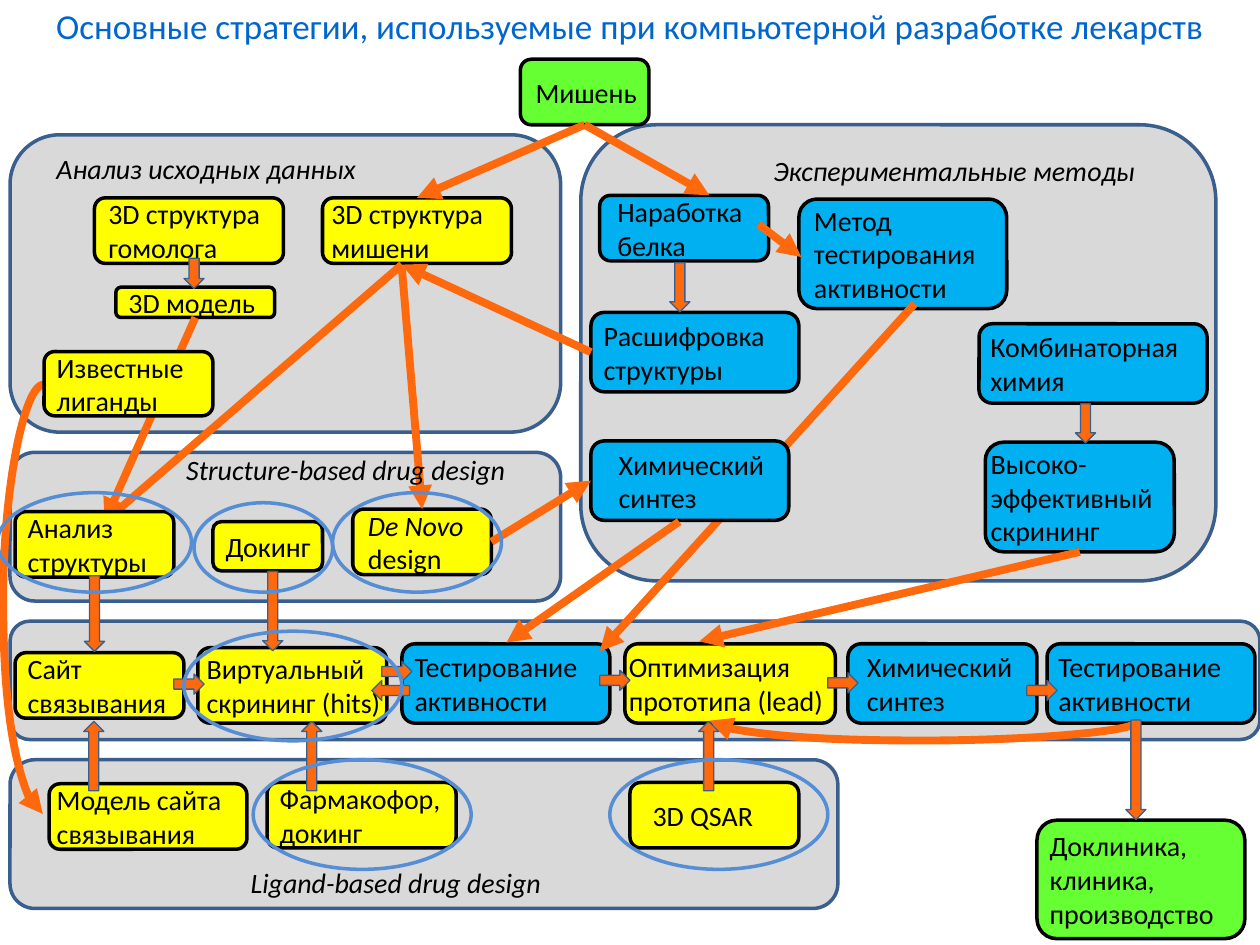
from lxml.etree import SubElement
from pptx import Presentation
from pptx.dml.color import RGBColor
from pptx.enum.shapes import MSO_CONNECTOR, MSO_SHAPE
from pptx.enum.text import MSO_ANCHOR, PP_ALIGN
from pptx.oxml.ns import qn
from pptx.util import Inches, Pt

COLORS = {
    "panel": "D9D9D9", "panel_edge": "3A5F8C", "yellow": "FFFF00",
    "blue": "00B0F0", "green": "66FF33", "black": "000000",
    "arrow": "FF690D", "ring": "558ED5", "title": "0066CC",
}
FONT = "Calibri"
TOP, LEFT, BOTTOM, RIGHT = 0, 1, 2, 3
CORNER_INSET = 0.29 / 6

PANELS = [
    (4.61, 0.99, 5.04, 3.62),
    (0.08, 3.59, 4.37, 1.18),
    (0.08, 1.07, 4.37, 2.36),
    (0.08, 4.93, 9.92, 0.94),
    (0.08, 6.03, 6.57, 1.18),
]

BACK_STEPS = {
    "screening": ("Виртуальный\ncкрининг (hits)", "yellow", (1.57, 5.14, 1.5, 0.6), 0.07),
    "lead": ("Оптимизация\nпрототипа (lead)", "yellow", (4.96, 5.11, 1.67, 0.63), 0.03),
    "homolog": ("3D структура\nгомолога", "yellow", (0.75, 1.57, 1.5, 0.52), 0.11),
    "model": ("3D модель", "yellow", (0.92, 2.28, 1.26, 0.24), 0.1),
    "docking": ("Докинг", "yellow", (1.69, 4.14, 0.87, 0.39), 0.1),
    "de_novo": ("De Novo\ndesign", "yellow", (2.8, 4.04, 1.1, 0.52), 0.12),
    "protein": ("Наработка\nбелка", "blue", (4.76, 1.55, 1.34, 0.52), 0.14),
    "decoding": ("Расшифровка\nструктуры", "blue", (4.69, 2.48, 1.65, 0.63), 0.1),
    "method": ("Метод\nтестирования\nактивности", "blue", (6.34, 1.58, 1.65, 0.87), 0.12),
    "throughput": ("Высоко-\nэффективный\nскрининг", "blue", (7.82, 3.51, 1.5, 0.87), 0.04),
    "combinatorial": ("Комбинаторная\nхимия", "blue", (7.77, 2.57, 1.81, 0.63), 0.09),
    "hit_testing": ("Тестирование\nактивности", "blue", (3.19, 5.11, 1.65, 0.63), 0.1),
    "lead_synthesis": ("Химический\nсинтез", "blue", (6.73, 5.11, 1.5, 0.63), 0.15),
    "lead_testing": ("Тестирование\nактивности", "blue", (8.31, 5.11, 1.65, 0.63), 0.09),
    "clinic": ("Доклиника,\nклиника,\nпроизводство", "green", (8.23, 6.51, 1.65, 0.94), 0.1),
    "pharmacophore": ("Фармакофор,\nдокинг", "yellow", (2.12, 6.21, 1.5, 0.52), 0.1),
    "site_model": ("Модель сайта\nсвязывания", "yellow", (0.39, 6.22, 1.57, 0.52), 0.06),
    "target_3d": ("3D структура\nмишени", "yellow", (2.56, 1.57, 1.5, 0.52), 0.07),
    "qsar": ("3D QSAR", "yellow", (5, 6.21, 1.34, 0.52), 0.18),
}

FRONT_STEPS = {
    "synthesis": ("Химический\nсинтез", "blue", (4.69, 3.5, 1.57, 0.63), 0.22),
    "ligands": ("Известные\nлиганды", "yellow", (0.35, 2.79, 1.34, 0.51), 0.1),
    "site": ("Сайт\nсвязывания", "yellow", (0.12, 5.18, 1.34, 0.52), 0.1),
    "analysis": ("Анализ\nструктуры", "yellow", (0.12, 4.06, 1.26, 0.52), 0.1),
    "target": ("Мишень", "green", (4.13, 0.47, 1.02, 0.52), 0.12),
}

BACK_LINKS = [
    ((7.26, 2.41), (4.76, 5.17)),
    (("model", BOTTOM), (0.83, 4.14)),
    ((3.19, 2.1), (0.83, 4.14)),
]

FRONT_LINKS = [
    (("de_novo", RIGHT), ("synthesis", LEFT)),
    (("decoding", LEFT), (3.19, 2.1)),
    ((5.39, 4.14), (4.02, 5.1)),
    (("target", BOTTOM), ("target_3d", TOP)),
    (("target", BOTTOM), (5.63, 1.55)),
    ((6.02, 1.78), (6.36, 2.04)),
    (("throughput", BOTTOM), (5.55, 5.09)),
    ((3.19, 2.13), ("de_novo", TOP)),
]

BLOCK_ARROWS = [
    (1.42, 2.09, 0.24, 90), (1.85, 4.77, 0.63, 90), (0.45, 4.79, 0.6, 90),
    (5.2, 2.2, 0.39, 90), (8.62, 6.03, 0.79, 90), (8.46, 3.28, 0.31, 90),
    (0.47, 5.92, 0.55, 270), (2.2, 5.92, 0.55, 270), (5.35, 5.92, 0.55, 270),
    (2.95, 5.4, 0.3, 180), (3.03, 5.25, 0.24, 0), (4.76, 5.32, 0.24, 0),
    (6.57, 5.34, 0.24, 0), (8.15, 5.4, 0.24, 0), (1.38, 5.35, 0.24, 0),
]

CAPTIONS = [
    ("Экспериментальные методы", 6.04, 1.17, 3.37),
    ("Анализ исходных данных", 0.35, 1.15, 2.84),
    ("Ligand-based drug design", 1.89, 6.82, 2.79),
    ("Structure-based drug design", 1.38, 3.54, 3.03),
]

RINGS = [
    (1.54, 3.99, 1.1, 0.71), (2.64, 3.91, 1.34, 0.79), (1.46, 5.01, 1.73, 0.87),
    (2.01, 6.03, 1.73, 0.87), (4.84, 6.03, 1.73, 0.87), (-0.02, 3.91, 1.54, 0.79),
]


def rgb(name):
    return RGBColor.from_string(COLORS[name])


def inches(values):
    return [Inches(value) for value in values]


def format_text(frame, size, color, italic=False):
    for paragraph in frame.paragraphs:
        for run in paragraph.runs:
            run.font.name = FONT
            run.font.size = Pt(size)
            run.font.italic = italic
            run.font.color.rgb = rgb(color)


def add_outline(slide, preset, place, fill, edge, weight):
    outline = slide.shapes.add_shape(preset, *inches(place))
    outline.shadow.inherit = False
    if fill:
        outline.fill.solid()
        outline.fill.fore_color.rgb = rgb(fill)
    else:
        outline.fill.background()
    outline.line.color.rgb = rgb(edge)
    outline.line.width = Pt(weight)
    return outline


def add_step(slide, wording, fill, place, indent):
    step = add_outline(slide, MSO_SHAPE.ROUNDED_RECTANGLE, place, fill, "black", 2)
    frame = step.text_frame
    frame.text = wording
    frame.word_wrap = True
    frame.vertical_anchor = MSO_ANCHOR.MIDDLE
    frame.margin_left = Inches(max(0, indent - CORNER_INSET * min(place[2:])))
    frame.margin_right = frame.margin_top = frame.margin_bottom = 0
    for paragraph in frame.paragraphs:
        paragraph.alignment = PP_ALIGN.LEFT
    format_text(frame, 16, "black")
    return step


def add_steps(slide, steps):
    return {name: add_step(slide, *step) for name, step in steps.items()}


def add_arrow(slide, kind, start, end):
    arrow = slide.shapes.add_connector(kind, *inches(start + end))
    arrow.line.color.rgb = rgb("arrow")
    arrow.line.width = Pt(4.5)
    SubElement(arrow.line._get_or_add_ln(), qn("a:tailEnd"), type="triangle")
    SubElement(arrow._element.spPr, qn("a:effectLst"))
    return arrow


def add_link(slide, steps, start, end):
    joins = [place if place[0] in steps else None for place in (start, end)]
    points = [(0, 0) if join else place for join, place in zip(joins, (start, end))]
    link = add_arrow(slide, MSO_CONNECTOR.STRAIGHT, *points)
    for connect, join in zip((link.begin_connect, link.end_connect), joins):
        if join:
            connect(steps[join[0]], join[1])


def add_curve(slide, start, end, bend, rotation=0):
    curve = add_arrow(slide, MSO_CONNECTOR.CURVE, start, end)
    properties = curve._element.spPr
    properties.find(qn("a:xfrm")).set("rot", str(rotation * 60000))
    guides = properties.find(qn("a:prstGeom")).find(qn("a:avLst"))
    SubElement(guides, qn("a:gd"), name="adj1", fmla=f"val {bend * 100000}")


def add_block_arrow(slide, left, top, length, rotation):
    place = (left, top, length, 0.16)
    arrow = add_outline(slide, MSO_SHAPE.RIGHT_ARROW, place, "arrow", "panel_edge", 0)
    arrow.rotation = rotation


def add_caption(slide, wording, left, top, width):
    caption = slide.shapes.add_textbox(*inches((left, top, width, 0.37)))
    caption.text_frame.text = wording
    format_text(caption.text_frame, 16, "black", italic=True)


def set_title(slide, wording):
    title = slide.shapes.title
    title.left, title.top, title.width, title.height = inches((0, -0.42, 10, 1.25))
    title.text_frame.text = wording
    title.text_frame.vertical_anchor = MSO_ANCHOR.MIDDLE
    title.text_frame.paragraphs[0].alignment = PP_ALIGN.CENTER
    format_text(title.text_frame, 20, "title")


def main():
    deck = Presentation()
    deck.slide_width, deck.slide_height = Inches(10), Inches(7.5)
    slide = deck.slides.add_slide(deck.slide_layouts[5])
    set_title(slide, "Основные стратегии, используемые при компьютерной разработке лекарств")
    for place in PANELS:
        add_outline(slide, MSO_SHAPE.ROUNDED_RECTANGLE, place, "panel", "panel_edge", 2)
    steps = add_steps(slide, BACK_STEPS)
    steps["de_novo"].text_frame.paragraphs[0].runs[0].font.italic = True
    for start, end in BACK_LINKS:
        add_link(slide, steps, start, end)
    add_curve(slide, (7.32, 7.42), (7.33, 4.03), -15, rotation=270)
    add_curve(slide, (0.35, 3.05), (0.34, 6.46), 33)
    steps.update(add_steps(slide, FRONT_STEPS))
    for start, end in FRONT_LINKS:
        add_link(slide, steps, start, end)
    for block_arrow in BLOCK_ARROWS:
        add_block_arrow(slide, *block_arrow)
    for caption in CAPTIONS:
        add_caption(slide, *caption)
    for place in RINGS:
        add_outline(slide, MSO_SHAPE.OVAL, place, None, "ring", 2)
    deck.save("out.pptx")


if __name__ == "__main__":
    main()
